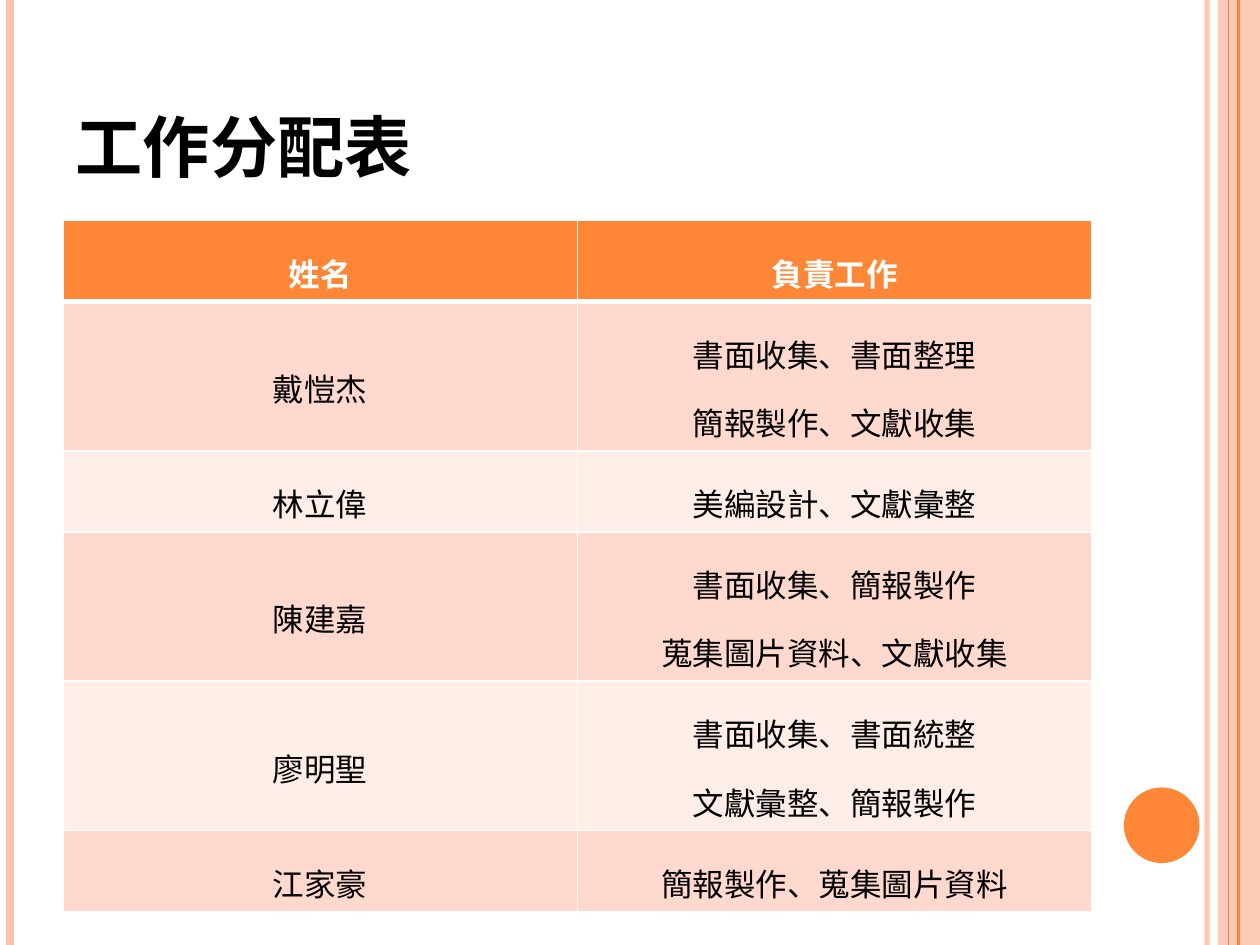
import pptx
import pptx.util
import pptx.dml.color
import pptx.enum.shapes
import pptx.enum.text
import pptx.oxml
import pptx.oxml.ns
import lxml.etree

Pt = pptx.util.Pt
RGB = pptx.dml.color.RGBColor
qn = pptx.oxml.ns.qn
ORANGE = RGB(0xFE, 0x86, 0x37)
PEACH = RGB(0xFE, 0xC3, 0xAE)
DARK_BAND = RGB(0xFF, 0xD9, 0xCE)
PALE_BAND = RGB(0xFF, 0xED, 0xE8)
WHITE = RGB(0xFF, 0xFF, 0xFF)
BLACK = RGB(0, 0, 0)
SANS = "Noto Sans CJK SC"
SERIF = "TeX Gyre Schola"
WIDTH, HEIGHT = 720, 540

# x, colour, weight, opacity in percent
STRIPES = [
    (689.76, PEACH, 3, 93),
    (5.76, PEACH, 4.5, 100),
    (707.76, ORANGE, 1.5, 100),
    (702, ORANGE, 0.75, 100),
]
ROWS = [
    ("姓名", "負責工作"),
    ("戴愷杰", "書面收集、書面整理\n簡報製作、文獻收集"),
    ("林立偉", "美編設計、文獻彙整"),
    ("陳建嘉", "書面收集、簡報製作\n蒐集圖片資料、文獻收集"),
    ("廖明聖", "書面收集、書面統整\n文獻彙整、簡報製作"),
    ("江家豪", "簡報製作、蒐集圖片資料"),
]


def fade(shape, percent):
    """Set the opacity of the shape's only colour."""
    color = next(shape._element.spPr.iter(qn("a:srgbClr")))
    alpha = lxml.etree.SubElement(color, qn("a:alpha"))
    alpha.set("val", str(percent * 1000))


def add_stripe(slide, x, color, weight, opacity):
    line = slide.shapes.add_connector(
        pptx.enum.shapes.MSO_CONNECTOR.STRAIGHT, Pt(x), 0, Pt(x), Pt(HEIGHT))
    line.line.color.rgb = color
    line.line.width = Pt(weight)
    lxml.etree.SubElement(line._element.spPr, qn("a:effectLst"))
    if opacity < 100:
        fade(line, opacity)


def add_block(slide, kind, left, top, width, height, color):
    shape = slide.shapes.add_shape(
        kind, Pt(left), Pt(top), Pt(width), Pt(height))
    shape.shadow.inherit = False
    shape.fill.solid()
    shape.fill.fore_color.rgb = color
    shape.line.fill.background()
    return shape


def style_text(para, face, size, color, bold, align):
    para.alignment = align
    para.line_spacing = 1.5
    font = para.font
    font.name, font.size, font.bold = face, Pt(size), bold
    font.color.rgb = color
    asian = lxml.etree.SubElement(font._element, qn("a:ea"))
    asian.set("typeface", SANS)


def set_title(slide, text):
    title = slide.shapes.title
    title.left, title.top = Pt(36), Pt(21.6)
    title.width, title.height = Pt(588), Pt(90)
    frame = title.text_frame
    frame.text = text
    frame.auto_size = pptx.enum.text.MSO_AUTO_SIZE.NONE
    frame.vertical_anchor = pptx.enum.text.MSO_ANCHOR.BOTTOM
    para = frame.paragraphs[0]
    style_text(para, SANS, 48, BLACK, True, pptx.enum.text.PP_ALIGN.LEFT)
    para.runs[0].font._element.set("cap", "small")


def set_borders(cell, top, bottom):
    props = cell._tc.get_or_add_tcPr()
    for side, weight in (("L", 1), ("R", 1), ("T", top), ("B", bottom)):
        props.append(pptx.oxml.parse_xml(
            f'<a:ln{side} {pptx.oxml.ns.nsdecls("a")} w="{Pt(weight)}">'
            f'<a:solidFill><a:srgbClr val="{WHITE}"/></a:solidFill>'
            f'</a:ln{side}>'))


def fill_cell(cell, text, row):
    head = row == 0
    set_borders(cell, 3 if row == 1 else 1, 3 if head else 1)
    cell.fill.solid()
    band = DARK_BAND if row % 2 else PALE_BAND
    cell.fill.fore_color.rgb = ORANGE if head else band
    cell.vertical_anchor = pptx.enum.text.MSO_ANCHOR.MIDDLE
    cell.text_frame.text = text
    for para in cell.text_frame.paragraphs:
        style_text(para, SERIF, 18, WHITE if head else BLACK, head,
                   pptx.enum.text.PP_ALIGN.CENTER)


def add_duties(slide, rows):
    height = 29.2
    table = slide.shapes.add_table(
        len(rows), 2, Pt(36), Pt(126), Pt(588), Pt(height * len(rows))).table
    table.horz_banding = False
    for r, texts in enumerate(rows):
        table.rows[r].height = Pt(height)
        for c, text in enumerate(texts):
            fill_cell(table.cell(r, c), text, r)


def main():
    deck = pptx.Presentation()
    deck.slide_width, deck.slide_height = Pt(WIDTH), Pt(HEIGHT)
    slide = deck.slides.add_slide(deck.slide_layouts[5])
    kinds = pptx.enum.shapes.MSO_SHAPE
    band = add_block(slide, kinds.RECTANGLE, 696, 0, 24, HEIGHT, PEACH)
    fade(band, 87)
    for stripe in STRIPES:
        add_stripe(slide, *stripe)
    add_block(slide, kinds.OVAL, 642.24, 450, 43.2, 43.2, ORANGE)
    set_title(slide, "工作分配表")
    add_duties(slide, ROWS)
    deck.save("out.pptx")


if __name__ == "__main__":
    main()
